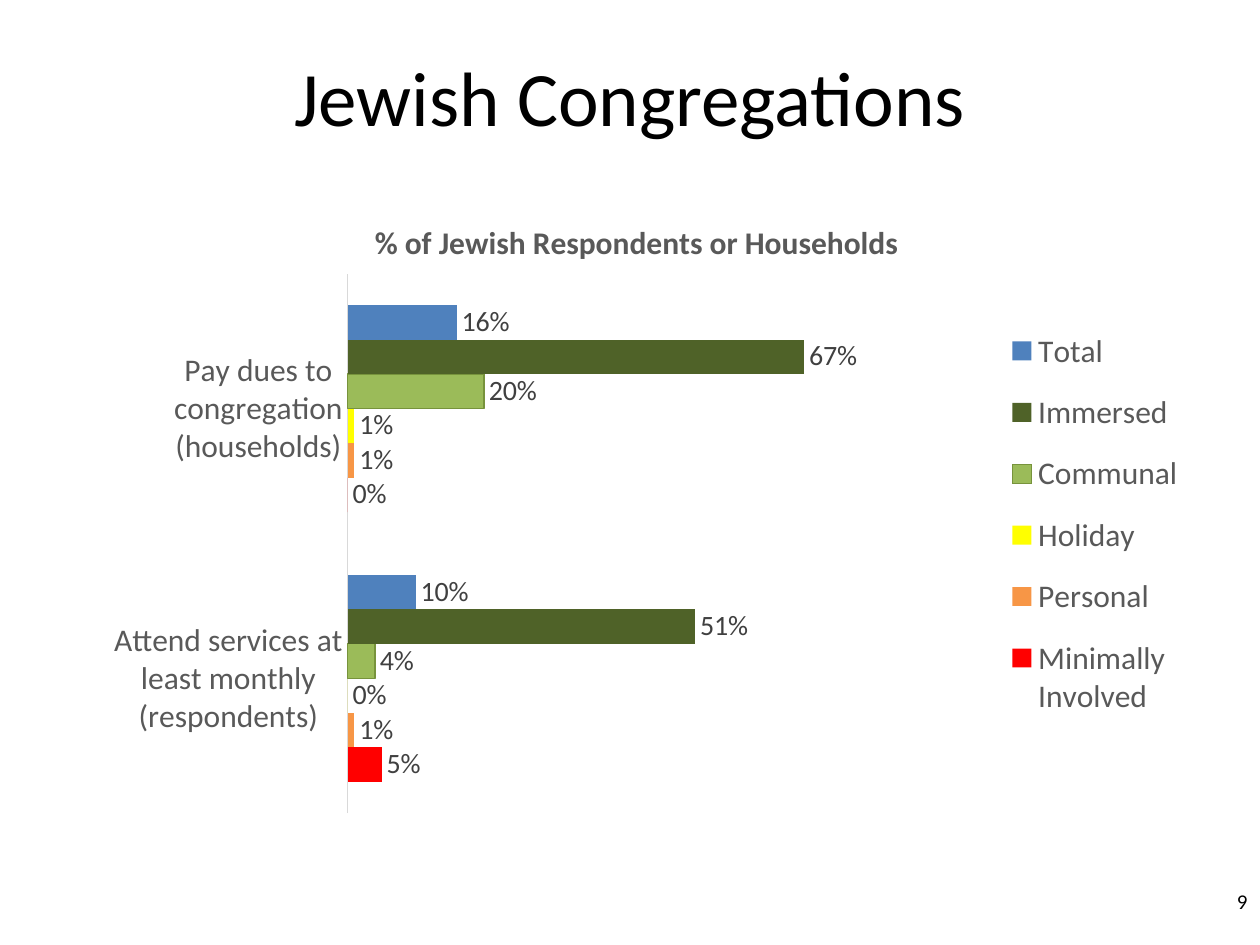
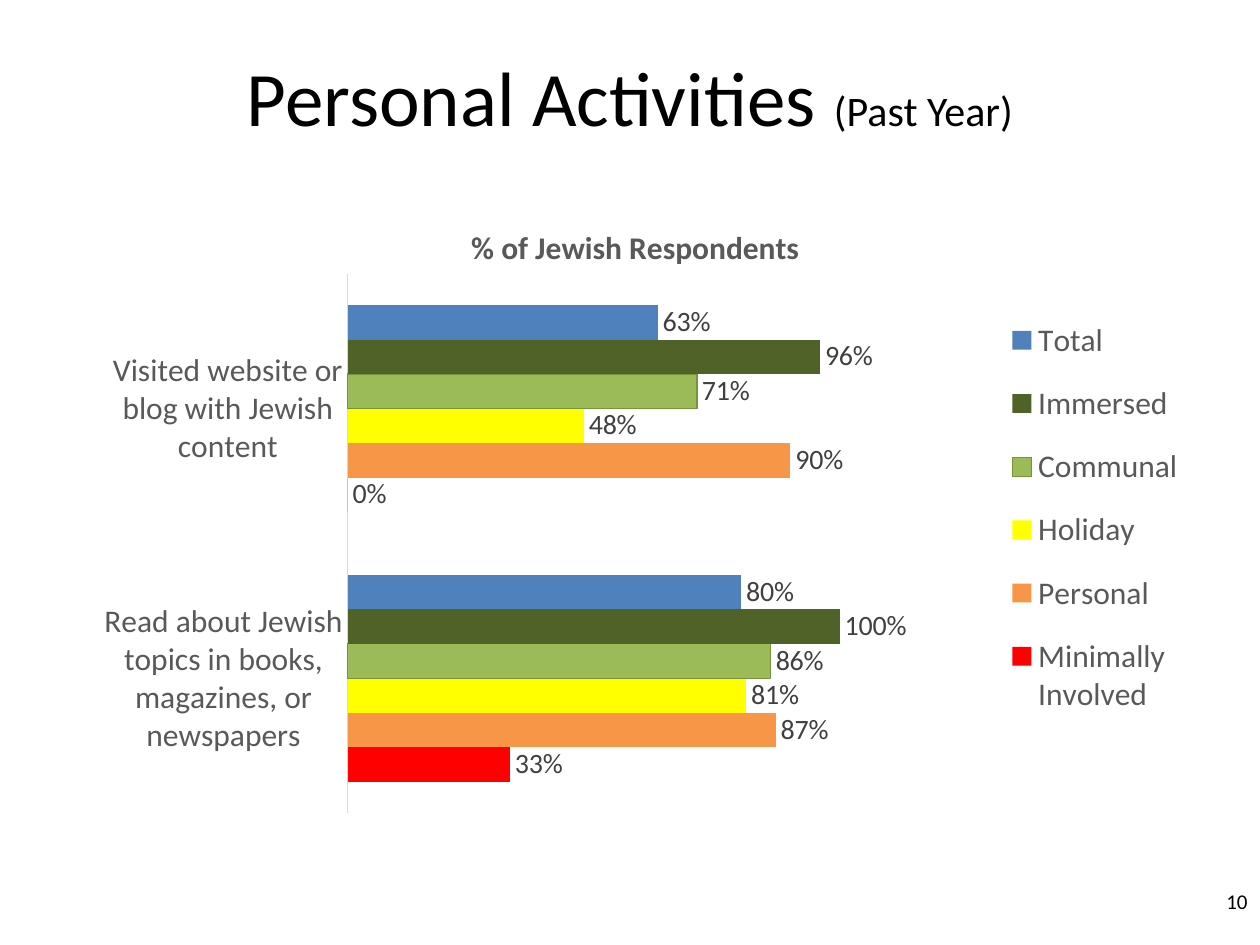
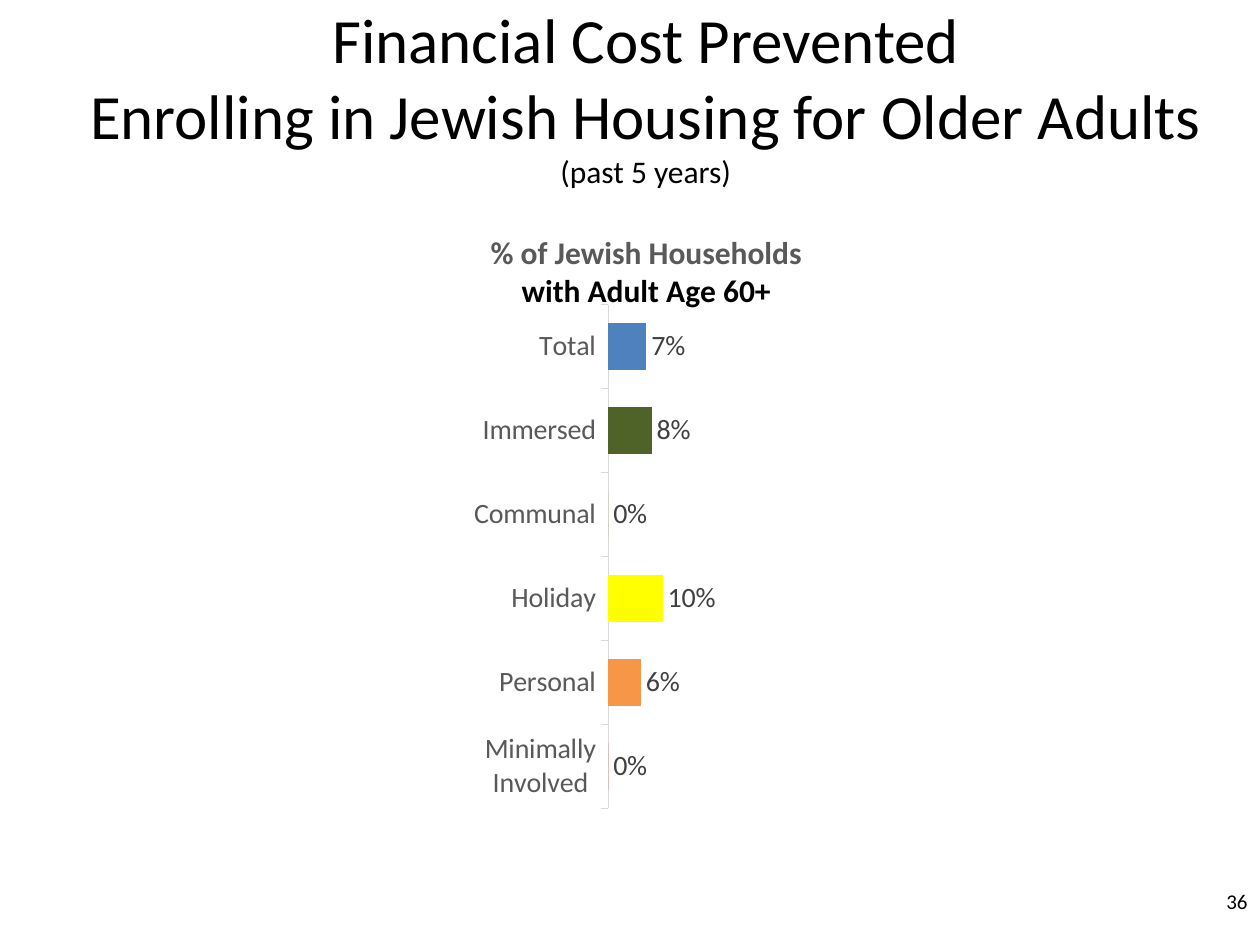
from lxml.etree import SubElement
from pptx import Presentation
from pptx.chart.data import CategoryChartData
from pptx.dml.color import RGBColor
from pptx.enum.chart import XL_CHART_TYPE, XL_LABEL_POSITION, XL_LEGEND_POSITION, XL_TICK_MARK
from pptx.enum.text import MSO_ANCHOR, PP_ALIGN
from pptx.oxml.ns import qn
from pptx.util import Pt

FONT = "Calibri"
BLACK, GREY, LABEL_GREY, AXIS_GREY = "000000", "595959", "404040", "D9D9D9"
COMMUNAL_EDGE = "77933C"
GROUPS = {
    "Total": "4F81BD",
    "Immersed": "4F6228",
    "Communal": "9BBB59",
    "Holiday": "FFFF00",
    "Personal": "F79646",
    "Minimally Involved": "FF0000",
}
WIDE_CHART = (36, 108.7, 648, 356.4)
NUMBER_AREA = (552.2, 500.4, 167.8, 28.8)

SLIDES = [
    {
        "title": [[("Jewish Congregations", 44)]],
        "title_width": 648,
        "number": "9",
        "chart_area": WIDE_CHART,
        "chart_title": [("% of Jewish Respondents or Households", GREY)],
        "chart_title_at": (0.27, 0.04),
        "plot": (0.251, 0.134, 0.601, 0.866),
        "legend": (0.82, 0.19, 0.18, 0.69),
        "gap": 182,
        "axis_size": 18,
        "tick": XL_TICK_MARK.NONE,
        "rows": {
            "Pay dues to congregation\n(households)": (0.16, 0.67, 0.2, 0.01, 0.01, 0),
            "Attend services at least monthly\n(respondents)": (0.1, 0.51, 0.04, 0, 0.01, 0.05),
        },
    },
    {
        "title": [[("Personal Activities ", 44), ("(Past Year)", 24)]],
        "title_width": 648,
        "number": "10",
        "chart_area": WIDE_CHART,
        "chart_title": [("% of Jewish Respondents", GREY)],
        "chart_title_at": (0.355, 0.047),
        "plot": (0.251, 0.134, 0.434, 0.866),
        "legend": (0.82, 0.17, 0.18, 0.71),
        "gap": 182,
        "axis_size": 18,
        "tick": XL_TICK_MARK.NONE,
        "rows": {
            "Visited website or blog with Jewish content": (0.63, 0.96, 0.71, 0.48, 0.9, 0),
            "Read about Jewish topics in books, magazines, or newspapers": (0.8, 1, 0.86, 0.81, 0.87, 0.33),
        },
    },
    {
        "title": [
            [("Financial Cost Prevented", 36)],
            [("Enrolling in Jewish Housing for Older Adults", 36)],
            [("(past 5 years)", 18)],
        ],
        "title_width": 666,
        "number": "36",
        "chart_area": (257.8, 126.7, 408.2, 344.2),
        "chart_title": [("% of Jewish Households", GREY), ("with Adult Age 60+", BLACK)],
        "chart_title_at": (0.05, 0.011),
        "plot": (0.22, 0.138, 0.761, 0.836),
        "legend": None,
        "gap": 80,
        "axis_size": 16,
        "tick": XL_TICK_MARK.OUTSIDE,
        "rows": dict(zip(GROUPS, [(0.07,), (0.08,), (0,), (0.1,), (0.06,), (0,)])),
    },
]


def color(value):
    return RGBColor.from_string(value)


def style(font, size, value, bold=False):
    font.name, font.size, font.bold = FONT, Pt(size), bold
    font.color.rgb = color(value)


def fill(part, value):
    part.format.fill.solid()
    part.format.fill.fore_color.rgb = color(value)


def draw_line(line, value):
    line.color.rgb = color(value)
    line.width = Pt(0.75)


def add_text(page, area, lines, align):
    frame = page.shapes.add_textbox(*map(Pt, area)).text_frame
    frame.word_wrap = True
    frame.vertical_anchor = MSO_ANCHOR.MIDDLE
    para = frame.paragraphs[0]
    para.alignment = align
    for index, line in enumerate(lines):
        if index:
            para.add_line_break()
        for text, size in line:
            span = para.add_run()
            span.text = text
            style(span.font, size, BLACK)


def place(element, position, values, inner=False):
    for old in element.findall(qn("c:layout")):
        element.remove(old)
    layout = SubElement(element, qn("c:layout"))
    element.insert(position, layout)
    manual = SubElement(layout, qn("c:manualLayout"))
    settings = [("layoutTarget", "inner")] if inner else []
    settings += [("xMode", "edge"), ("yMode", "edge")]
    settings += zip(("x", "y", "w", "h"), values)
    for name, value in settings:
        SubElement(manual, qn("c:" + name)).set("val", str(value))


def chart_data(rows, grouped):
    data = CategoryChartData(number_format="0%")
    names = list(reversed(rows))
    data.categories = names
    series_names = list(GROUPS) if grouped else ["Series 1"]
    for index, name in reversed(list(enumerate(series_names))):
        data.add_series(name, [rows[row][index] for row in names])
    return data


def color_bars(plot, grouped):
    for series in plot.series:
        series.invert_if_negative = False
        fill(series, GROUPS.get(series.name, GROUPS["Total"]))
        if series.name == "Communal":
            draw_line(series.format.line, COMMUNAL_EDGE)
        if not grouped:
            for index, name in enumerate(reversed(GROUPS)):
                fill(series.points[index], GROUPS[name])


def add_bars(page, content):
    grouped = content["legend"] is not None
    chart = page.shapes.add_chart(
        XL_CHART_TYPE.BAR_CLUSTERED,
        *map(Pt, content["chart_area"]),
        chart_data(content["rows"], grouped),
    ).chart
    style(chart.font, 10, BLACK)

    frame = chart.chart_title.text_frame
    for index, (text, value) in enumerate(content["chart_title"]):
        para = frame.add_paragraph() if index else frame.paragraphs[0]
        para.text = text
        style(para.font, 18, value, bold=True)
    place(chart.chart_title._element, 1, content["chart_title_at"])

    plot = chart.plots[0]
    plot.gap_width, plot.overlap, plot.vary_by_categories = content["gap"], 0, False
    color_bars(plot, grouped)
    plot.has_data_labels = True
    labels = plot.data_labels
    labels.show_value = True
    labels.number_format, labels.number_format_is_linked = "0%", False
    labels.position = XL_LABEL_POSITION.OUTSIDE_END
    style(labels.font, 16, LABEL_GREY)
    place(chart._chartSpace.chart.plotArea, 0, content["plot"], inner=True)

    axis = chart.category_axis
    axis.major_tick_mark = content["tick"]
    axis.has_major_gridlines = False
    style(axis.tick_labels.font, content["axis_size"], GREY)
    draw_line(axis.format.line, AXIS_GREY)
    scale = chart.value_axis
    scale.minimum_scale, scale.maximum_scale = 0, 1
    scale.has_major_gridlines = scale.visible = False

    chart.has_legend = grouped
    if grouped:
        legend = chart.legend
        legend.position = XL_LEGEND_POSITION.RIGHT
        legend.include_in_layout = False
        style(legend.font, 18, GREY)
        place(legend._element, 1, content["legend"])


def main():
    deck = Presentation()
    deck.slide_width, deck.slide_height = Pt(720), Pt(540)
    for content in SLIDES:
        page = deck.slides.add_slide(deck.slide_layouts[6])
        add_text(page, (36, 9.4, content["title_width"], 90), content["title"], PP_ALIGN.CENTER)
        add_bars(page, content)
        add_text(page, NUMBER_AREA, [[(content["number"], 12)]], PP_ALIGN.RIGHT)
    deck.save("out.pptx")


if __name__ == "__main__":
    main()
